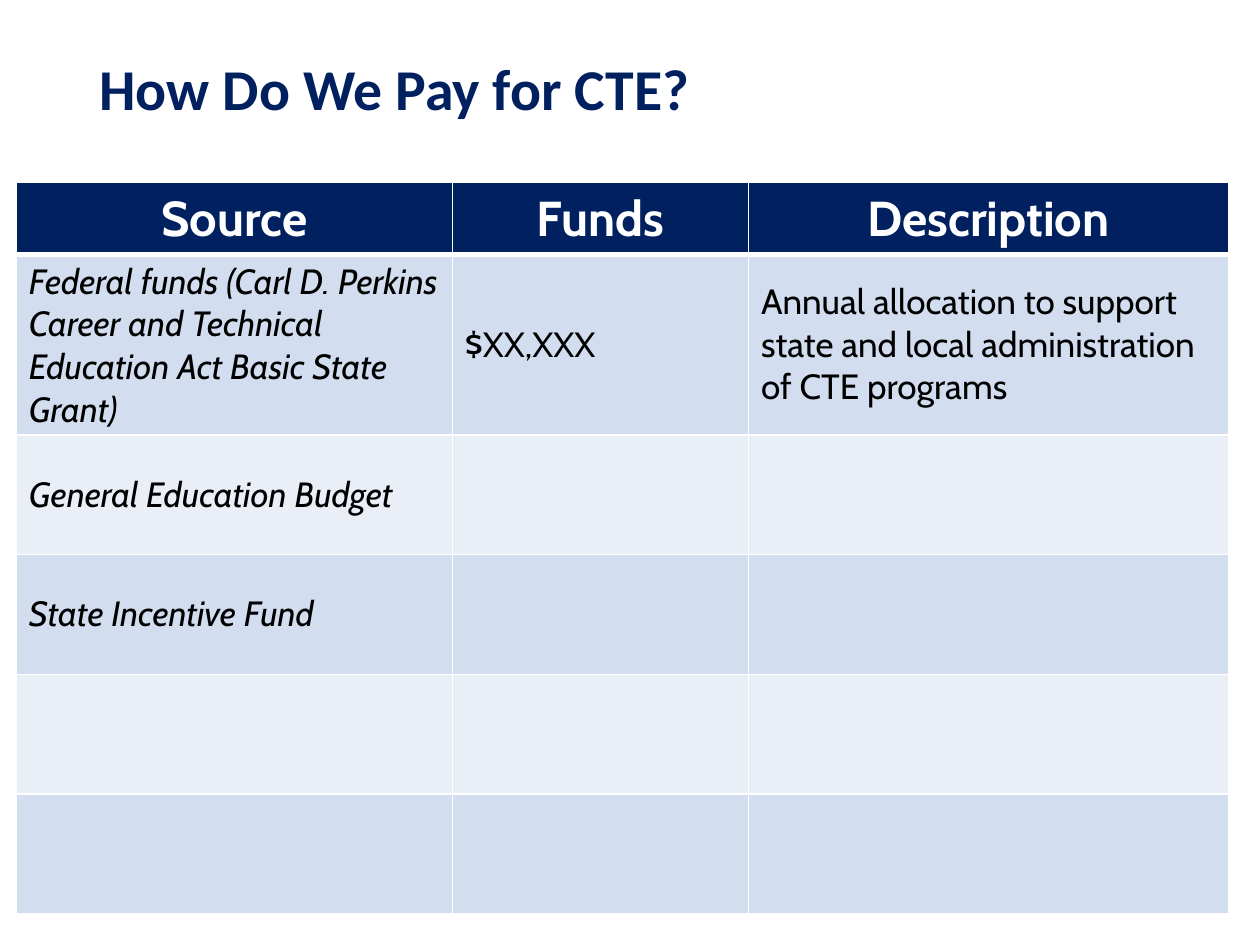
from lxml import etree
from pptx import Presentation
from pptx.dml.color import RGBColor
from pptx.enum.text import MSO_ANCHOR, PP_ALIGN
from pptx.oxml.ns import qn
from pptx.util import Inches, Pt

MIDDLE = MSO_ANCHOR.MIDDLE
LEFT, CENTER = PP_ALIGN.LEFT, PP_ALIGN.CENTER

NAVY, WHITE, BLACK = "002060", "FFFFFF", "000000"
BANDS = ["D2DEEF", "EAEFF7"]

COLUMN_WIDTHS = [3.46, 2.35, 3.81]
HEADER_HEIGHT, ROW_HEIGHT = 0.55, 0.95
HEADERS = ["Source", "Funds", "Description"]
FUNDING = [
    ["Federal funds (Carl D. Perkins Career and Technical Education Act Basic State Grant)",
     "$XX,XXX",
     "Annual allocation to support state and local administration of CTE programs"],
    ["General Education Budget", "", ""],
    ["State Incentive Fund", "", ""],
    ["", "", ""],
    ["", "", ""],
]


def rgb(color):
    return RGBColor.from_string(color)


def set_text(tf, text, font, size, color, bold=False, italic=False, align=LEFT):
    p = tf.paragraphs[0]
    p.text = text
    p.alignment = align
    for f in [p.font] + [r.font for r in p.runs]:
        f.name = font
        f.size = Pt(size)
        f.bold = bold
        f.italic = italic
        f.color.rgb = rgb(color)


def set_borders(cell, top=1, bottom=1):
    """Draw white cell borders; widths are in points."""
    tc_pr = cell._tc.get_or_add_tcPr()
    for side, width in (("L", 1), ("R", 1), ("T", top), ("B", bottom)):
        ln = etree.SubElement(tc_pr, qn(f"a:ln{side}"), w=str(Pt(width)))
        fill = etree.SubElement(ln, qn("a:solidFill"))
        etree.SubElement(fill, qn("a:srgbClr"), val=WHITE)


def add_title(slide, text):
    sp = slide.shapes.add_textbox(Inches(0.69), Inches(0), Inches(8.62), Inches(1.45))
    tf = sp.text_frame
    tf.word_wrap = True
    tf.vertical_anchor = MIDDLE
    set_text(tf, text, "Calibri", 33, NAVY, bold=True)
    tf.paragraphs[0].line_spacing = 0.9


def add_funding_table(slide):
    rows = [HEADERS] + FUNDING
    heights = [HEADER_HEIGHT] + [ROW_HEIGHT] * len(FUNDING)
    table = slide.shapes.add_table(
        len(rows), len(HEADERS), Inches(0.13), Inches(1.45),
        Inches(sum(COLUMN_WIDTHS)), Inches(sum(heights))).table
    for column, width in zip(table.columns, COLUMN_WIDTHS):
        column.width = Inches(width)
    for i, (texts, height) in enumerate(zip(rows, heights)):
        table.rows[i].height = Inches(height)
        for j, text in enumerate(texts):
            cell = table.cell(i, j)
            cell.vertical_anchor = MIDDLE
            set_borders(cell, top=3 if i == 1 else 1, bottom=3 if i == 0 else 1)
            cell.fill.solid()
            if i == 0:
                cell.fill.fore_color.rgb = rgb(NAVY)
                set_text(cell.text_frame, text, "Cabin", 28, WHITE, bold=True, align=CENTER)
            else:
                cell.fill.fore_color.rgb = rgb(BANDS[(i - 1) % 2])
                set_text(cell.text_frame, text, "Cabin", 20, BLACK, italic=j == 0)


def main():
    prs = Presentation()
    prs.slide_width, prs.slide_height = Inches(10), Inches(7.5)
    slide = prs.slides.add_slide(prs.slide_layouts[6])
    add_title(slide, "How Do We Pay for CTE?")
    add_funding_table(slide)
    prs.save("out.pptx")


if __name__ == "__main__":
    main()
